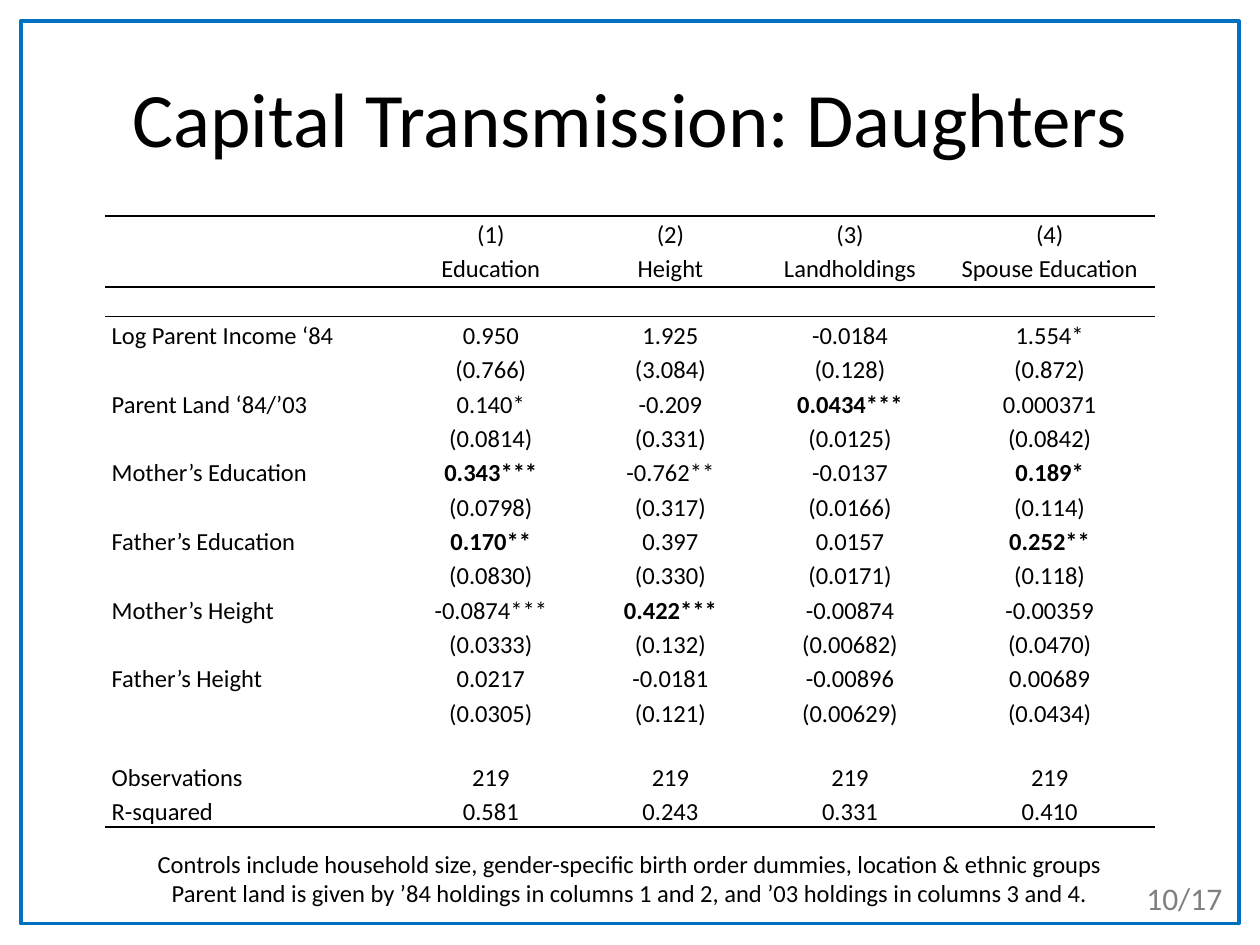
import pptx
import pptx.util
import pptx.dml.color
import pptx.enum.shapes
import pptx.enum.text
import pptx.oxml.ns
from lxml import etree
from pptx.util import Cm

BLACK = pptx.dml.color.RGBColor(0x00, 0x00, 0x00)
BLUE = pptx.dml.color.RGBColor(0x00, 0x70, 0xC0)
GREY = pptx.dml.color.RGBColor(0x80, 0x80, 0x80)
FONT = "Calibri"
CENTER = pptx.enum.text.PP_ALIGN.CENTER
LEFT = pptx.enum.text.PP_ALIGN.LEFT
NO_STYLE = "{2D5ABB26-0587-4C30-8999-92F81FD0307C}"

COLUMN_WIDTHS = [5.87, 3.81, 3.43, 3.81, 4.24]
ROWS = [
    ["", "(1)", "(2)", "(3)", "(4)"],
    ["", "Education", "Height", "Landholdings", "Spouse Education"],
    [""] * 5,
    ["Log Parent Income ‘84", "0.950", "1.925", "-0.0184", "1.554*"],
    ["", "(0.766)", "(3.084)", "(0.128)", "(0.872)"],
    ["Parent Land ‘84/’03", "0.140*", "-0.209", "0.0434***", "0.000371"],
    ["", "(0.0814)", "(0.331)", "(0.0125)", "(0.0842)"],
    ["Mother’s Education", "0.343***", "-0.762**", "-0.0137", "0.189*"],
    ["", "(0.0798)", "(0.317)", "(0.0166)", "(0.114)"],
    ["Father’s Education", "0.170**", "0.397", "0.0157", "0.252**"],
    ["", "(0.0830)", "(0.330)", "(0.0171)", "(0.118)"],
    ["Mother’s Height", "-0.0874***", "0.422***", "-0.00874", "-0.00359"],
    ["", "(0.0333)", "(0.132)", "(0.00682)", "(0.0470)"],
    ["Father’s Height", "0.0217", "-0.0181", "-0.00896", "0.00689"],
    ["", "(0.0305)", "(0.121)", "(0.00629)", "(0.0434)"],
    [""] * 5,
    ["Observations"] + ["219"] * 4,
    ["R-squared", "0.581", "0.243", "0.331", "0.410"],
]
BOLD = {"0.0434***", "0.343***", "0.189*", "0.170**", "0.252**", "0.422***"}
RULES = {0: "lnT", 1: "lnB", 2: "lnT", len(ROWS) - 1: "lnB"}
NOTES = [
    "Controls include household size, gender-specific birth order dummies, location & ethnic groups",
    "Parent land is given by ’84 holdings in columns 1 and 2, and ’03 holdings in columns 3 and 4.",
]


def add_run(p, text, size, color=BLACK, bold=False):
    """Append a formatted run to a paragraph."""
    r = p.add_run()
    r.text = text
    r.font.name = FONT
    r.font.size = pptx.util.Pt(size)
    r.font.color.rgb = color
    r.font.bold = bold


def add_frame(s):
    """Draw the blue outline around the slide."""
    sp = s.shapes.add_shape(pptx.enum.shapes.MSO_SHAPE.RECTANGLE,
                            Cm(0.42), Cm(0.42), Cm(24.56), Cm(18.2))
    sp.shadow.inherit = False
    sp.fill.background()
    sp.line.color.rgb = BLUE
    sp.line.width = pptx.util.Pt(2)


def set_title(s, text):
    """Place and fill the title placeholder."""
    sp = s.shapes.title
    sp.left, sp.top, sp.width, sp.height = Cm(1.27), Cm(0.76), Cm(22.86), Cm(3.18)
    tf = sp.text_frame
    tf.vertical_anchor = pptx.enum.text.MSO_ANCHOR.MIDDLE
    p = tf.paragraphs[0]
    p.alignment = CENTER
    add_run(p, text, 44)


def add_rule(cell, side):
    """Give one side of a cell a thin black border."""
    qn = pptx.oxml.ns.qn
    ln = etree.Element(qn("a:" + side), w=str(pptx.util.Pt(1)))
    fill = etree.SubElement(ln, qn("a:solidFill"))
    etree.SubElement(fill, qn("a:srgbClr"), val=str(BLACK))
    cell._tc.get_or_add_tcPr().insert(0, ln)


def fill_cell(cell, text, alignment):
    """Format a table cell and write its text."""
    cell.margin_left = cell.margin_right = Cm(0.13)
    cell.margin_top = cell.margin_bottom = 0
    cell.fill.background()
    p = cell.text_frame.paragraphs[0]
    p.alignment = alignment
    p.line_spacing = 1.15
    if text:
        add_run(p, text, 14, bold=text in BOLD)
    else:
        etree.SubElement(p._p, pptx.oxml.ns.qn("a:endParaRPr"), sz="1400")


def add_results(s):
    """Add the table of regression results."""
    frame = s.shapes.add_table(len(ROWS), len(COLUMN_WIDTHS),
                               Cm(2.12), Cm(4.35), Cm(21.16), Cm(12.32))
    table = frame.table
    table.first_row = table.horz_banding = False
    frame._element.find(".//" + pptx.oxml.ns.qn("a:tableStyleId")).text = NO_STYLE
    for column, width in zip(table.columns, COLUMN_WIDTHS):
        column.width = Cm(width)
    for i, values in enumerate(ROWS):
        table.rows[i].height = Cm(0.74 if i == 1 else 0.58)
        for j, text in enumerate(values):
            cell = table.cell(i, j)
            fill_cell(cell, text, CENTER if j else LEFT)
            if i in RULES:
                add_rule(cell, RULES[i])


def add_text(s, box, lines, size, color=BLACK, alignment=LEFT):
    """Add a text box with one paragraph per line."""
    tf = s.shapes.add_textbox(*map(Cm, box)).text_frame
    tf.word_wrap = True
    for i, line in enumerate(lines):
        p = tf.add_paragraph() if i else tf.paragraphs[0]
        p.alignment = alignment
        add_run(p, line, size, color)


def main():
    """Build and save the slide."""
    prs = pptx.Presentation()
    prs.slide_width, prs.slide_height = Cm(25.4), Cm(19.05)
    s = prs.slides.add_slide(prs.slide_layouts[5])
    add_frame(s)
    set_title(s, "Capital Transmission: Daughters")
    add_results(s)
    add_text(s, (2.12, 16.99, 21.16, 2.06), NOTES, 14, alignment=CENTER)
    add_text(s, (22.86, 17.6, 2.12, 1.02), ["10/17"], 18, GREY)
    prs.save("out.pptx")


if __name__ == "__main__":
    main()
